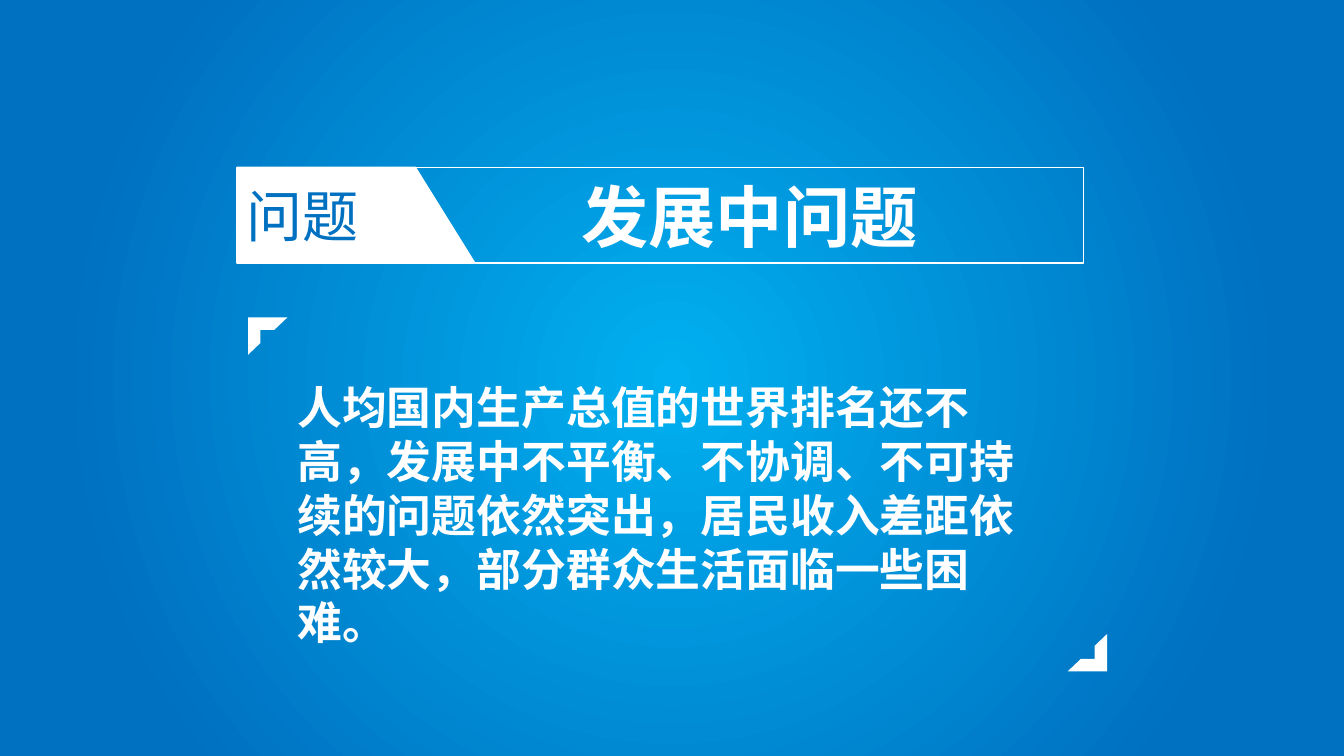
from lxml.etree import SubElement
from pptx import Presentation
from pptx.dml.color import RGBColor
from pptx.enum.shapes import MSO_SHAPE as Shape
from pptx.enum.text import MSO_ANCHOR as Anchor, PP_ALIGN as Align
from pptx.oxml.ns import qn
from pptx.util import Inches, Pt

COLORS = {"white": "FFFFFF", "sky": "00B0F0", "blue": "0070C0"}
WIDTH, HEIGHT = 13.33, 7.5
TITLE_FONT, BODY_FONT = "Noto Sans CJK SC", "Noto Sans CJK JP"
STATEMENT = (
    "人均国内生产总值的世界排名还不高，发展中不平衡、不协调、不可持续的问题依然突出，"
    "居民收入差距依然较大，部分群众生活面临一些困难。"
)


def color(name):
    """Return the named palette colour."""
    return RGBColor.from_string(COLORS[name])


def paint(part, fill=None, line=None):
    """Give a shape its fill and outline and drop its shadow."""
    part.shadow.inherit = False
    if fill:
        part.fill.solid()
        part.fill.fore_color.rgb = color(fill)
    else:
        part.fill.background()
    if line:
        part.line.color.rgb = color(line)
        part.line.width = Pt(1)
    else:
        part.line.fill.background()


def write(part, text, ink, face, size, bold=False, align=Align.LEFT, anchor=Anchor.MIDDLE):
    """Write one wrapped paragraph, without hanging punctuation, into a shape."""
    frame = part.text_frame
    frame.word_wrap = True
    frame.vertical_anchor = anchor
    paragraph = frame.paragraphs[0]
    paragraph.alignment = align
    paragraph._p.get_or_add_pPr().set("hangingPunct", "0")
    run = paragraph.add_run()
    run.text = text
    for name, value in {"name": face, "size": Pt(size), "bold": bold}.items():
        setattr(run.font, name, value)
    run.font.color.rgb = color(ink)
    SubElement(run.font._element, qn("a:ea"), typeface=face)


def draw_background(slide):
    """Fill the slide with a glow that fades out from its centre."""
    fill = slide.background.fill
    fill.gradient()
    for stop, (position, name) in zip(fill.gradient_stops, [(0, "sky"), (0.8, "blue")]):
        stop.position = position
        stop.color.rgb = color(name)
    gradient = slide._element.find(".//" + qn("a:gradFill"))
    linear = gradient.find(qn("a:lin"))
    glow = gradient.makeelement(qn("a:path"), {"path": "circle"})
    SubElement(glow, qn("a:fillToRect"), dict.fromkeys("ltrb", "50000"))
    gradient.replace(linear, glow)


def draw_heading(slide, left, top, width, height):
    """Draw the outlined title with its slanted label on the left."""
    label_top, label_bottom = 1.77, 2.36
    title = slide.shapes.add_shape(
        Shape.RECTANGLE, Inches(left + label_top), Inches(top),
        Inches(width - label_top), Inches(height))
    paint(title, line="white")
    write(title, "发展中问题", "white", TITLE_FONT, 48, True, Align.CENTER)

    outline = slide.shapes.build_freeform(Inches(left), Inches(top))
    corners = [(label_top, 0), (label_bottom, height), (0, height)]
    outline.add_line_segments([(Inches(left + x), Inches(top + y)) for x, y in corners])
    label = outline.convert_to_shape()
    paint(label, "white", "white")
    write(label, "问题", "blue", TITLE_FONT, 40)


def draw_statement(slide, left, top, width, height):
    """Place the statement between two opposite corner marks."""
    mark_width, mark_height = 0.39, 0.37
    body = slide.shapes.add_textbox(
        Inches(left + mark_width), Inches(top + 0.57), Inches(7.64), Inches(2.25))
    write(body, STATEMENT, "white", BODY_FONT, 32, True, anchor=Anchor.TOP)

    far_corner = (left + width - mark_width, top + height - mark_height)
    for (x, y), turn in [((left, top), 0), (far_corner, 180)]:
        mark = slide.shapes.add_shape(
            Shape.HALF_FRAME, Inches(x), Inches(y), Inches(mark_width), Inches(mark_height))
        mark.rotation = turn
        paint(mark, "white")


def main():
    """Build and save the slide."""
    deck = Presentation()
    deck.slide_width, deck.slide_height = Inches(WIDTH), Inches(HEIGHT)
    slide = deck.slides.add_slide(deck.slide_layouts[6])
    draw_background(slide)
    draw_heading(slide, 2.35, 1.66, 8.4, 0.95)
    draw_statement(slide, 2.46, 3.15, 8.52, 3.51)
    deck.save("out.pptx")


if __name__ == "__main__":
    main()
